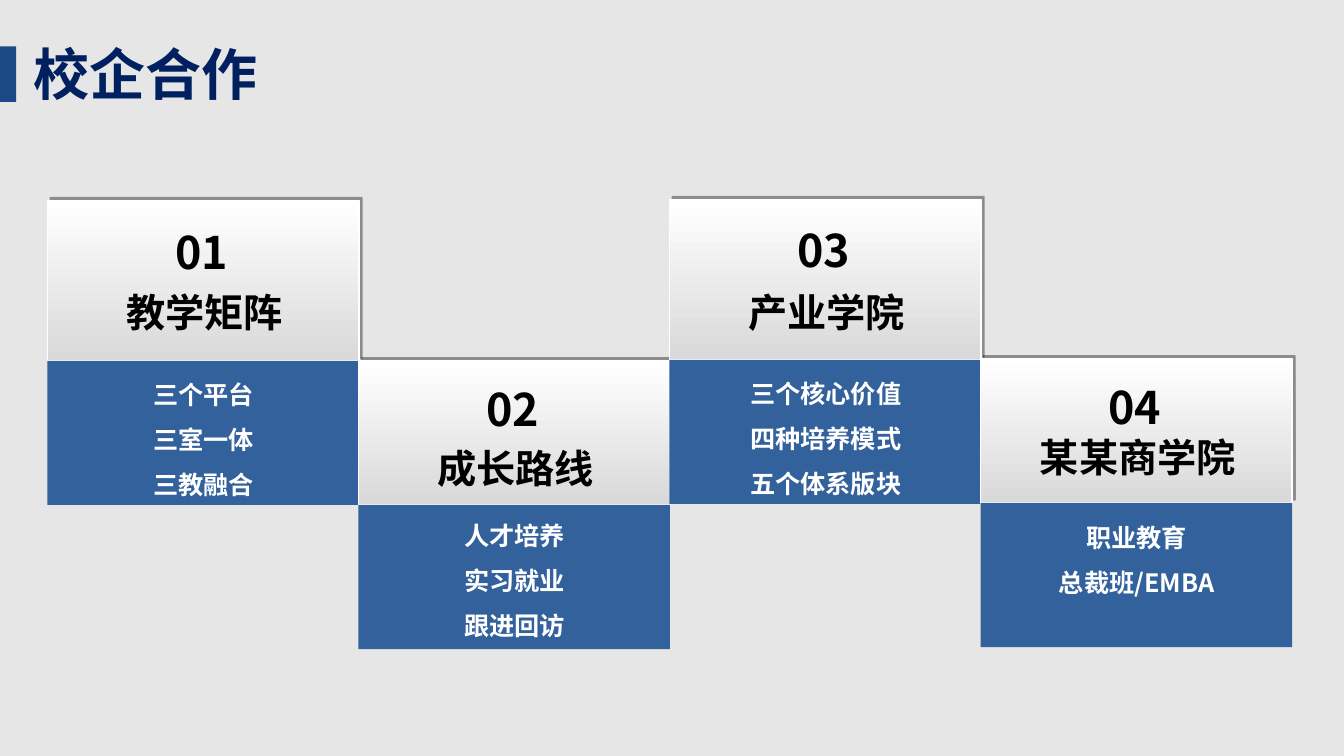
from dataclasses import dataclass

from lxml import etree
from pptx import Presentation
from pptx import util as u
from pptx.dml import color
from pptx.enum import shapes, text
from pptx.oxml import ns

LEFT, MID = text.PP_ALIGN.LEFT, text.PP_ALIGN.CENTER
PITCH, WIDE, DEEP = 3.085, 3.09, 1.43


@dataclass(frozen=True)
class Theme:
    face: str = "Noto Sans CJK SC"
    back: str = "E7E6E6"
    title: str = "002060"
    mark: str = "1C4885"
    blue: str = "32619C"
    white: str = "FFFFFF"
    gray: str = "D9D9D9"
    black: str = "000000"
    big: int = 40
    num: int = 32
    name: int = 28
    item: int = 18


@dataclass(frozen=True)
class Card:
    top: float
    deep: float
    num_top: float
    name_top: float
    list_top: float
    name: str
    items: tuple


THEME = Theme()
CARDS = (
    Card(1.99, 1.59, 2.18, 2.81, 3.56, "教学矩阵",
         ("三个平台", "三室一体", "三教融合")),
    Card(3.58, DEEP, 3.74, 4.36, 4.96, "成长路线",
         ("人才培养", "实习就业", "跟进回访")),
    Card(1.98, 1.59, 2.16, 2.81, 3.55, "产业学院",
         ("三个核心价值", "四种培养模式", "五个体系版块")),
    Card(3.56, DEEP, 3.72, 4.25, 4.98, "某某商学院",
         ("职业教育", "总裁班/EMBA")),
)


def rgb(tone):
    return color.RGBColor.from_string(tone)


def apply(thing, form):
    for key, value in form.items():
        setattr(thing, key, value)


def place(shape, box):
    keys = ("left", "top", "width", "height")
    apply(shape, dict(zip(keys, map(u.Inches, box))))


def write(shape, lines, size, tone, align=MID, space=1.0):
    frame = shape.text_frame
    apply(frame, {
        "word_wrap": True,
        "auto_size": text.MSO_AUTO_SIZE.NONE,
        "vertical_anchor": text.MSO_ANCHOR.TOP,
    })
    for i, line in enumerate(lines):
        para = frame.add_paragraph() if i else frame.paragraphs[0]
        apply(para, {"alignment": align, "line_spacing": space})
        run = para.add_run()
        run.text = line
        apply(run.font, {"size": u.Pt(size), "bold": True, "name": THEME.face})
        run.font.color.rgb = rgb(tone)
        props = run.font._element
        etree.SubElement(props, ns.qn("a:ea"), typeface=THEME.face)


def label(slide, box, *args, **form):
    write(slide.shapes.add_textbox(*map(u.Inches, box)), *args, **form)


def block(slide, box, tone):
    kind = shapes.MSO_SHAPE.RECTANGLE
    shape = slide.shapes.add_shape(kind, *map(u.Inches, box))
    shape.shadow.inherit = False
    shape.fill.solid()
    shape.fill.fore_color.rgb = rgb(tone)
    shape.line.fill.background()
    return shape


def shade(shape):
    effect = shape._element.spPr.find(ns.qn("a:effectLst"))
    cast = etree.SubElement(
        effect, ns.qn("a:outerShdw"), blurRad="0", dist=str(u.Pt(3)),
        dir=str(315 * 60000), algn="bl", rotWithShape="0")
    tone = etree.SubElement(cast, ns.qn("a:srgbClr"), val=THEME.black)
    etree.SubElement(tone, ns.qn("a:alpha"), val="38000")


def panel(slide, box):
    shape = block(slide, box, THEME.white)
    shape.fill.gradient()
    shape.fill.gradient_angle = 270
    tones = (THEME.white, THEME.gray)
    for i, (stop, tone) in enumerate(zip(shape.fill.gradient_stops, tones)):
        stop.position = i
        stop.color.rgb = rgb(tone)
    shape.line.color.rgb = rgb(THEME.white)
    shape.line.width = u.Pt(1)
    shade(shape)


def column(slide, i, card):
    left = 0.47 + i * PITCH
    panel(slide, (left, card.top, WIDE, card.deep))
    block(slide, (left, card.top + card.deep, WIDE, DEEP), THEME.blue)
    label(slide, (left + 1.17, card.num_top, 0.77, 0.64),
          [f"{i + 1:02}"], THEME.num, THEME.black, align=LEFT)
    label(slide, (left + 0.4, card.name_top, 2.32, 0.57),
          [card.name], THEME.name, THEME.black)
    label(slide, (left + 0.15, card.list_top, 2.8, 1.46),
          card.items, THEME.item, THEME.white, space=1.5)


def header(slide, words):
    title = slide.shapes.title
    place(title, (0.23, 0.34, 5.03, 0.77))
    write(title, [words], THEME.big, THEME.title, align=LEFT)
    block(slide, (0, 0.46, 0.16, 0.55), THEME.mark)


def main():
    deck = Presentation()
    apply(deck, {"slide_width": u.Inches(13.33), "slide_height": u.Inches(7.5)})
    slide = deck.slides.add_slide(deck.slide_layouts[5])
    slide.background.fill.solid()
    slide.background.fill.fore_color.rgb = rgb(THEME.back)
    header(slide, "校企合作")
    for i, card in enumerate(CARDS):
        column(slide, i, card)
    deck.save("out.pptx")


if __name__ == "__main__":
    main()
